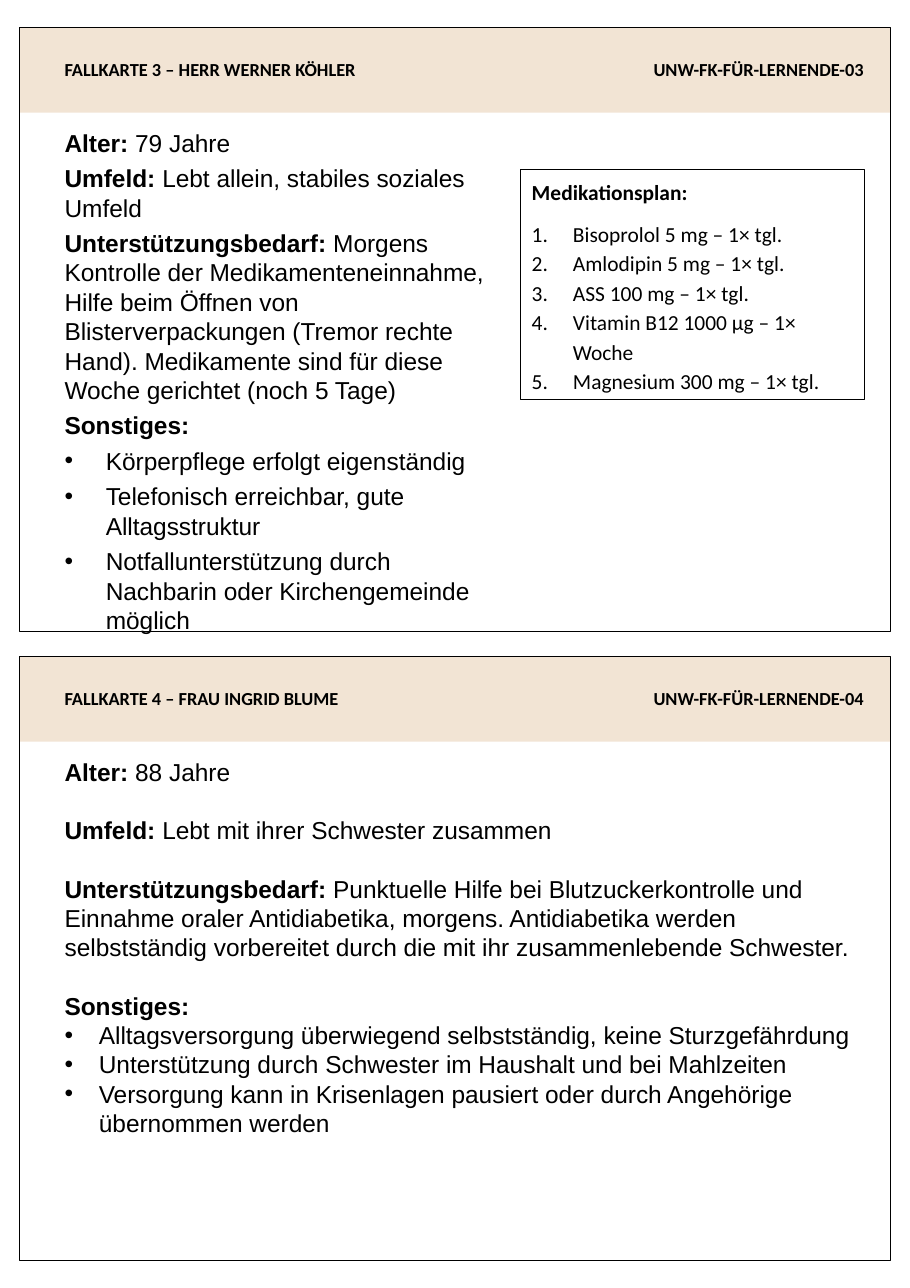
from pptx import Presentation
from pptx.dml.color import RGBColor
from pptx.enum.shapes import MSO_SHAPE as Shape
from pptx.enum.text import MSO_ANCHOR as Anchor, MSO_AUTO_SIZE as AutoSize, PP_ALIGN as Align
from pptx.oxml.ns import qn
from pptx.util import Cm, Pt
from lxml.etree import SubElement

BLACK = RGBColor(0x00, 0x00, 0x00)
SAND = RGBColor(0xF2, 0xE4, 0xD4)

CARDS = [
    {
        "title": "FALLKARTE 3 – HERR WERNER KÖHLER",
        "code": "UNW-FK-FÜR-LERNENDE-03",
        "facts": [
            ("Alter: ", "79 Jahre"),
            ("Umfeld: ", "Lebt allein, stabiles soziales Umfeld"),
            ("Unterstützungsbedarf: ",
             "Morgens Kontrolle der Medikamenteneinnahme, Hilfe beim Öffnen von "
             "Blisterverpackungen (Tremor rechte Hand). Medikamente sind für diese "
             "Woche gerichtet (noch 5 Tage)"),
        ],
        "notes": [
            "Körperpflege erfolgt eigenständig",
            "Telefonisch erreichbar, gute Alltagsstruktur",
            "Notfallunterstützung durch Nachbarin oder Kirchengemeinde möglich",
        ],
        "size": (10.52, 12.19), "fact_gap": 4, "note_gap": 4, "indent": 0.95,
    },
    {
        "title": "FALLKARTE 4 – FRAU INGRID BLUME",
        "code": "UNW-FK-FÜR-LERNENDE-04",
        "facts": [
            ("Alter: ", "88 Jahre"),
            ("Umfeld: ", "Lebt mit ihrer Schwester zusammen"),
            ("Unterstützungsbedarf: ",
             "Punktuelle Hilfe bei Blutzuckerkontrolle und Einnahme oraler "
             "Antidiabetika, morgens. Antidiabetika werden selbstständig vorbereitet "
             "durch die mit ihr zusammenlebende Schwester."),
        ],
        "notes": [
            "Alltagsversorgung überwiegend selbstständig, keine Sturzgefährdung",
            "Unterstützung durch Schwester im Haushalt und bei Mahlzeiten",
            "Versorgung kann in Krisenlagen pausiert oder durch Angehörige übernommen werden",
        ],
        "size": (18.92, 9.14), "fact_gap": 19, "note_gap": 0, "indent": 0.79,
    },
]
NOTES_HEADING = "Sonstiges:"
PLAN_HEADING = "Medikationsplan:"
MEDICATION = [
    "Bisoprolol 5 mg – 1× tgl.",
    "Amlodipin 5 mg – 1× tgl.",
    "ASS 100 mg – 1× tgl.",
    "Vitamin B12 1000 µg – 1× Woche",
    "Magnesium 300 mg – 1× tgl.",
]

CARD_LEFT, CARD_TOP, CARD_PITCH = 0.46, 0.64, 14.5
CARD_WIDTH, CARD_HEIGHT, BAND_HEIGHT = 20.07, 13.92, 1.96
TEXT_LEFT, CODE_LEFT = 1.24, 11.76
HEADER_OFFSET, BODY_OFFSET = 0.58, 2.18


def add_rectangle(page, left, top, width, height, fill=None, line=None):
    box = page.shapes.add_shape(Shape.RECTANGLE, Cm(left), Cm(top), Cm(width), Cm(height))
    box.shadow.inherit = False
    if fill is None:
        box.fill.background()
    else:
        box.fill.solid()
        box.fill.fore_color.rgb = fill
    if line is None:
        box.line.fill.background()
    else:
        box.line.color.rgb = line
        box.line.width = Pt(0.75)
    return box


def prepare_frame(box):
    frame = box.text_frame
    frame.word_wrap = True
    frame.auto_size = AutoSize.SHAPE_TO_FIT_TEXT
    frame.vertical_anchor = Anchor.TOP
    return frame


def add_text_frame(page, left, top, width, height):
    return prepare_frame(page.shapes.add_textbox(Cm(left), Cm(top), Cm(width), Cm(height)))


def add_paragraph(frame, label, detail, font, size, after=0, align=Align.LEFT):
    first = frame.paragraphs[0]
    para = frame.add_paragraph() if first.runs else first
    para.alignment = align
    para.space_after = Pt(after)
    for text, bold in ((label, True), (detail, False)):
        if text:
            span = para.add_run()
            span.text = text
            span.font.name = font
            span.font.size = Pt(size)
            span.font.bold = bold
            span.font.color.rgb = BLACK
    return para


def add_marker(para, indent, tag, **attributes):
    properties = para._p.get_or_add_pPr()
    properties.set("marL", str(Cm(indent)))
    properties.set("indent", str(-Cm(indent)))
    face = "Arial" if tag == "a:buChar" else "+mj-lt"
    SubElement(properties, qn("a:buFont"), typeface=face)
    SubElement(properties, qn(tag), **attributes)


def add_card(page, card, top):
    add_rectangle(page, CARD_LEFT, top, CARD_WIDTH, BAND_HEIGHT, fill=SAND)
    add_rectangle(page, CARD_LEFT, top, CARD_WIDTH, CARD_HEIGHT, line=BLACK)

    header_top = top + HEADER_OFFSET
    code = add_text_frame(page, CODE_LEFT, header_top, 8.41, 0.76)
    add_paragraph(code, card["code"], "", "Calibri", 12, align=Align.RIGHT)
    title = add_text_frame(page, TEXT_LEFT, header_top, 10.52, 0.76)
    add_paragraph(title, card["title"], "", "Calibri", 12)

    body = add_text_frame(page, TEXT_LEFT, top + BODY_OFFSET, *card["size"])
    for label, detail in card["facts"]:
        add_paragraph(body, label, detail, "Arial", 16, card["fact_gap"])
    add_paragraph(body, NOTES_HEADING, "", "Arial", 16, card["note_gap"])
    for note in card["notes"]:
        para = add_paragraph(body, "", note, "Arial", 16, card["note_gap"])
        add_marker(para, card["indent"], "a:buChar", char="•")


def add_medication_plan(page):
    frame = prepare_frame(add_rectangle(page, 12.01, 3.91, 7.92, 5.31, line=BLACK))
    add_paragraph(frame, PLAN_HEADING, "", "Calibri", 14, 8)
    for entry in MEDICATION:
        after = 8 if entry == MEDICATION[-1] else 0
        add_paragraph(frame, "", entry, "Calibri", 14, after)
    for para in frame.paragraphs:
        para.line_spacing = 1.15
    for para in frame.paragraphs[1:]:
        add_marker(para, 0.95, "a:buAutoNum", type="arabicPeriod")


def main():
    deck = Presentation()
    deck.slide_width, deck.slide_height = Cm(20.98), Cm(29.69)
    page = deck.slides.add_slide(deck.slide_layouts[6])
    for index, card in enumerate(CARDS):
        add_card(page, card, CARD_TOP + index * CARD_PITCH)
    add_medication_plan(page)
    deck.save("out.pptx")


if __name__ == "__main__":
    main()
